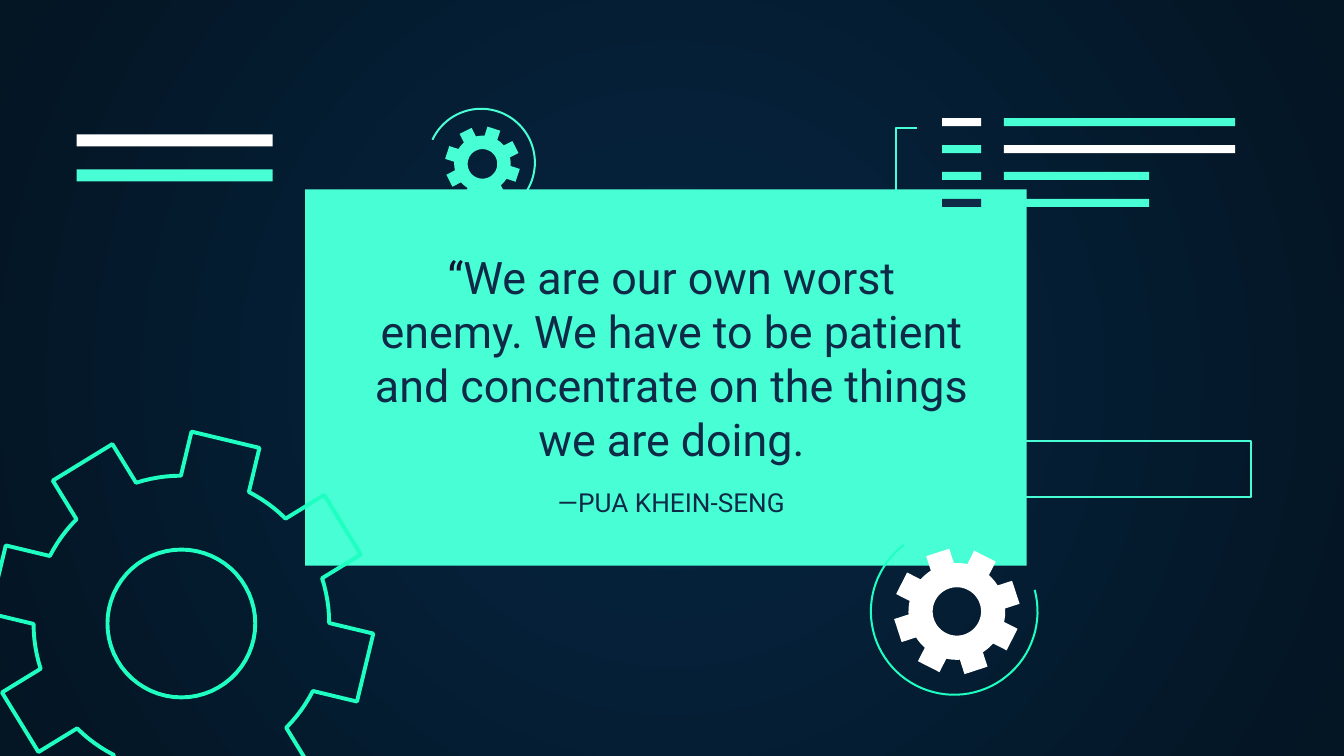
import math

from lxml import etree
from pptx import Presentation
from pptx import util as u
from pptx.dml.color import RGBColor
from pptx.enum import shapes, text
from pptx.oxml.ns import qn

MINT = RGBColor(0x48, 0xFF, 0xD5)
BRIGHT_MINT = RGBColor(0x1E, 0xFF, 0xC1)
WHITE = RGBColor(0xFF, 0xFF, 0xFF)
NAVY = RGBColor(0x0E, 0x2A, 0x47)
INDIGO = RGBColor(0x16, 0x12, 0x34)
GLOW = RGBColor(0x05, 0x26, 0x43)
NIGHT = RGBColor(0x04, 0x15, 0x23)
TEETH = 8
PITCH = 360 / TEETH


def arc(center, radius, start, end, steps):
    angles = [math.radians(start + (end - start) * i / steps) for i in range(steps + 1)]
    return [(center[0] + radius * math.sin(a), center[1] - radius * math.cos(a)) for a in angles]


def paint(shape, fill, line, width):
    shape.shadow.inherit = False
    if fill is None:
        shape.fill.background()
    else:
        shape.fill.solid()
        shape.fill.fore_color.rgb = fill
    if line is None:
        shape.line.fill.background()
    else:
        shape.line.color.rgb = line
        shape.line.width = u.Pt(width)


prs = Presentation()
prs.slide_width = u.Inches(10)
prs.slide_height = u.Inches(10 * 9 / 16)
slide = prs.slides.add_slide(prs.slide_layouts[5])

backdrop = slide.background.fill
backdrop.gradient()
for stop, color in zip(backdrop.gradient_stops, (GLOW, NIGHT)):
    stop.color.rgb = color
gradient = slide._element.find(".//" + qn("a:gradFill"))
gradient.remove(gradient.find(qn("a:lin")))
radial = etree.SubElement(gradient, qn("a:path"), {"path": "circle"})
etree.SubElement(radial, qn("a:fillToRect"), dict.fromkeys("ltrb", "50000"))

blocks = [
    (2.27, 1.41, 5.37, 2.8, MINT, None),
    (7.2, 3.28, 2.11, 0.42, None, MINT),
    (0.57, 1, 1.46, 0.09, WHITE, None),
    (0.57, 1.26, 1.46, 0.09, MINT, None),
]
code_rows = [(WHITE, MINT, 1.72), (MINT, WHITE, 1.72), (MINT, MINT, 1.08), (NAVY, MINT, 1.08)]
for row, (marker, bar, length) in enumerate(code_rows):
    top = 0.88 + row * 0.2
    blocks += [(7.01, top, 0.29, 0.06, marker, None), (7.47, top, length, 0.06, bar, None)]
for left, top, width, height, fill, line in blocks:
    block = slide.shapes.add_shape(
        shapes.MSO_SHAPE.RECTANGLE, *map(u.Inches, (left, top, width, height)))
    paint(block, fill, line, 1.09)

outlines = [
    ([arc((3.58, 1.21), 0.4, -65, 192, 60)], False, None, MINT, 1.09),
    ([arc((7.1, 4.55), 0.62, 75, 323, 60)], False, None, BRIGHT_MINT, 1.09),
    ([[(6.83, 1.56), (6.67, 1.56), (6.67, 0.95), (6.82, 0.95)]], False, None, MINT, 1.09),
]
gears = [
    ((1.35, 4.64), 0.55, 1.1, 1.43, 0.26, 13.5, None, BRIGHT_MINT),
    ((7.12, 4.55), 0.18, 0.36, 0.47, 0.09, -18, WHITE, None),
    ((3.59, 1.22), 0.11, 0.21, 0.28, 0.05, 18, MINT, None),
]
for center, hub, body, tip, half_tooth, first, fill, line in gears:
    root_angle = math.degrees(math.asin(half_tooth / body))
    tip_angle = math.degrees(math.asin(half_tooth / tip))
    rim = []
    for tooth in range(TEETH):
        middle = first + tooth * PITCH
        rim += arc(center, tip, middle - tip_angle, middle + tip_angle, 1)
        rim += arc(center, body, middle + root_angle, middle + PITCH - root_angle, 6)
    outlines.append(([rim, arc(center, hub, 0, 360, 60)], True, fill, line, 2.1))

for contours, closed, fill, line, width in outlines:
    (start, *rest), *holes = [[(u.Inches(x), u.Inches(y)) for x, y in c] for c in contours]
    builder = slide.shapes.build_freeform(*start)
    builder.add_line_segments(rest, close=closed)
    for hole in holes:
        builder.move_to(*hole[0])
        builder.add_line_segments(hole[1:], close=closed)
    paint(builder.convert_to_shape(), fill, line, width)

author = slide.shapes.title
slide.shapes._spTree.append(author._element)
quote = slide.shapes.add_textbox(0, 0, 0, 0)
margins = dict.fromkeys(
    ("margin_left", "margin_right", "margin_top", "margin_bottom"), u.Inches(0.1))
captions = [
    (author, (2.69, 1.75, 4.61, 2.2), text.MSO_ANCHOR.BOTTOM, 14,
     [("—PUA KHEIN-SENG", NAVY)]),
    (quote, (2.69, 1.76, 4.61, 1.55), text.MSO_ANCHOR.TOP, 24,
     [("“", INDIGO),
      ("We are our own worst enemy. We have to be patient and concentrate "
       "on the things we are doing.", NAVY)]),
]
for caption, place, anchor, size, pieces in captions:
    for side, length in zip(("left", "top", "width", "height"), place):
        setattr(caption, side, u.Inches(length))
    frame_format = {"word_wrap": True, "auto_size": text.MSO_AUTO_SIZE.NONE,
                    "vertical_anchor": anchor, **margins}
    for key, value in frame_format.items():
        setattr(caption.text_frame, key, value)
    paragraph = caption.text_frame.paragraphs[0]
    paragraph.alignment = text.PP_ALIGN.CENTER
    for words, color in pieces:
        run = paragraph.add_run()
        run.text = words
        for key, value in {"name": "Roboto", "size": u.Pt(size)}.items():
            setattr(run.font, key, value)
        run.font.color.rgb = color

prs.save("out.pptx")
